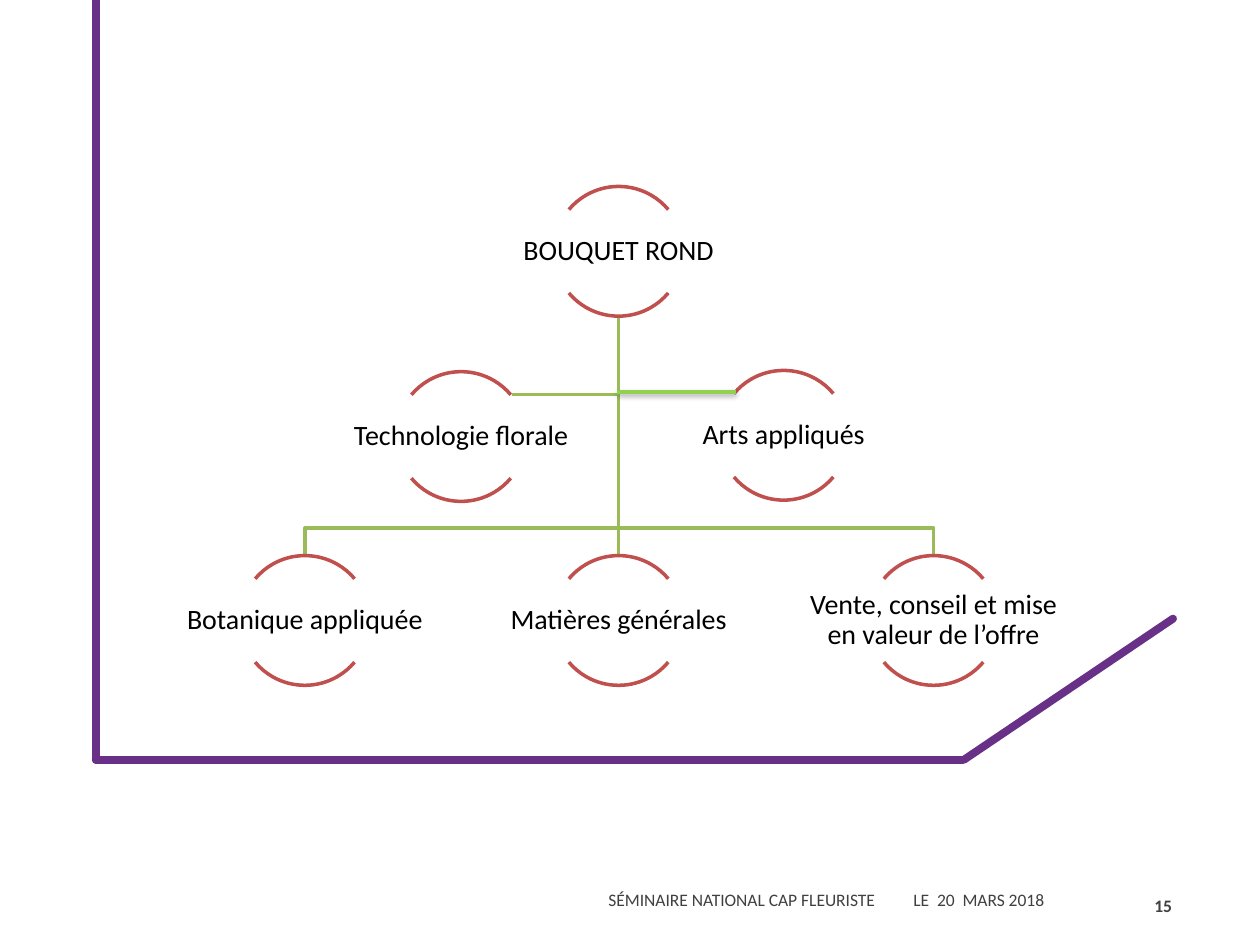
import pptx
import pptx.dml.color
import pptx.enum.shapes
import pptx.enum.text
import pptx.oxml
import pptx.oxml.ns
import pptx.util
from pptx.util import Inches

PURPLE = pptx.dml.color.RGBColor(0x68, 0x30, 0x86)
OLIVE = pptx.dml.color.RGBColor(0x9B, 0xBB, 0x59)
LIME = pptx.dml.color.RGBColor(0x92, 0xD0, 0x50)
RED = pptx.dml.color.RGBColor(0xC0, 0x50, 0x4D)
BLACK = pptx.dml.color.RGBColor(0, 0, 0)
GREY = pptx.dml.color.RGBColor(0x40, 0x40, 0x40)

FONT = "Calibri"
DIAMETER = 1.03
LABEL_WIDTH, LABEL_HEIGHT = 2.06, 0.66
TRUNK_X, TRUNK_TOP = 4.91, 2.51
BRANCH_Y, LEAF_TOP = 4.19, 4.41
ARC_ANGLES = ((132, 192), (24, 84))
NODES = (
    ("BOUQUET ROND", TRUNK_X, 1.48),
    ("Botanique appliquée", 2.42, LEAF_TOP),
    ("Matières générales", TRUNK_X, LEAF_TOP),
    ("Vente, conseil et mise en valeur de l’offre", 7.41, LEAF_TOP),
    ("Technologie florale", 3.66, 2.95),
    ("Arts appliqués", 6.22, 2.94),
)
FRAME_LINES = (
    ((0.76, 6.03), (7.64, 6.03)),
    ((7.65, 6.03), (9.31, 4.91)),
    ((0.76, 6.02), (0.76, 0)),
)
SHADOW = (
    '<a:outerShdw blurRad="40000" dist="20000" dir="5400000" rotWithShape="0">'
    '<a:srgbClr val="000000"><a:alpha val="38000"/></a:srgbClr></a:outerShdw>'
)


def style_line(shape, color, width):
    shape.line.color.rgb = color
    shape.line.width = pptx.util.Pt(width)


def add_line(slide, start, end, color, width, effect="", cap="flat"):
    points = [Inches(value) for value in (*start, *end)]
    connector = slide.shapes.add_connector(
        pptx.enum.shapes.MSO_CONNECTOR.STRAIGHT, *points
    )
    style_line(connector, color, width)
    connector.line._get_or_add_ln().set("cap", cap)
    namespace = pptx.oxml.ns.nsdecls("a")
    connector._element.spPr.append(
        pptx.oxml.parse_xml(f"<a:effectLst {namespace}>{effect}</a:effectLst>")
    )


def add_branch(slide, points):
    vertices = [(Inches(x), Inches(y)) for x, y in points]
    builder = slide.shapes.build_freeform(*vertices[0])
    builder.add_line_segments(vertices[1:], close=False)
    shape = builder.convert_to_shape()
    shape.shadow.inherit = False
    shape.fill.background()
    style_line(shape, OLIVE, 2)


def add_text(slide, box, text, size, color, alignment, bold=False, margin=None):
    shape = slide.shapes.add_textbox(*[Inches(value) for value in box])
    frame = shape.text_frame
    frame.word_wrap = True
    frame.vertical_anchor = pptx.enum.text.MSO_ANCHOR.MIDDLE
    if margin is not None:
        frame.margin_left = frame.margin_right = Inches(margin)
        frame.margin_top = frame.margin_bottom = Inches(margin)
    paragraph = frame.paragraphs[0]
    paragraph.alignment = alignment
    run = paragraph.add_run()
    run.text = text
    run.font.name = FONT
    run.font.size = pptx.util.Pt(size)
    run.font.bold = bold
    run.font.color.rgb = color
    return paragraph


def add_node(slide, text, center, top):
    for angles in ARC_ANGLES:
        arc = slide.shapes.add_shape(
            pptx.enum.shapes.MSO_SHAPE.ARC,
            Inches(center - DIAMETER / 2), Inches(top),
            Inches(DIAMETER), Inches(DIAMETER),
        )
        arc.adjustments[0], arc.adjustments[1] = angles
        arc.shadow.inherit = False
        arc.fill.background()
        style_line(arc, RED, 2)
    label_top = top + (DIAMETER - LABEL_HEIGHT) / 2
    box = (center - LABEL_WIDTH / 2, label_top, LABEL_WIDTH, LABEL_HEIGHT)
    paragraph = add_text(
        slide, box, text, 16, BLACK, pptx.enum.text.PP_ALIGN.CENTER, margin=0.01
    )
    paragraph.line_spacing = 0.9


def add_footer(slide):
    paragraph = add_text(
        slide, (4.73, 6.93, 3.75, 0.4),
        "SÉMINAIRE NATIONAL CAP FLEURISTE\tLE  20  MARS 2018",
        10, GREY, pptx.enum.text.PP_ALIGN.LEFT,
    )
    namespace = pptx.oxml.ns.nsdecls("a")
    paragraph._p.get_or_add_pPr().append(pptx.oxml.parse_xml(
        f'<a:tabLst {namespace}><a:tab pos="{Inches(2.42)}" algn="l"/></a:tabLst>'
    ))
    paragraph.line_spacing = pptx.util.Pt(13.2)
    add_text(
        slide, (8.96, 6.99, 0.44, 0.4), "15", 10, GREY,
        pptx.enum.text.PP_ALIGN.RIGHT, bold=True,
    )


def main():
    presentation = pptx.Presentation()
    presentation.slide_width = Inches(10)
    presentation.slide_height = Inches(7.5)
    slide = presentation.slides.add_slide(presentation.slide_layouts[6])

    for start, end in FRAME_LINES:
        add_line(slide, start, end, PURPLE, 4.5, cap="rnd")
    add_footer(slide)

    trunk = (TRUNK_X, TRUNK_TOP)
    add_branch(slide, [trunk, (TRUNK_X, 3.13), (4.06, 3.13)])
    for leaf_x in (7.41, 2.42):
        add_branch(slide, [
            trunk, (TRUNK_X, BRANCH_Y), (leaf_x, BRANCH_Y), (leaf_x, LEAF_TOP)
        ])
    add_line(slide, trunk, (TRUNK_X, LEAF_TOP), OLIVE, 2)

    for text, center, top in NODES:
        add_node(slide, text, center, top)
    add_line(slide, (5.84, 3.11), (4.9, 3.11), LIME, 2, effect=SHADOW)

    presentation.save("out.pptx")


if __name__ == "__main__":
    main()
